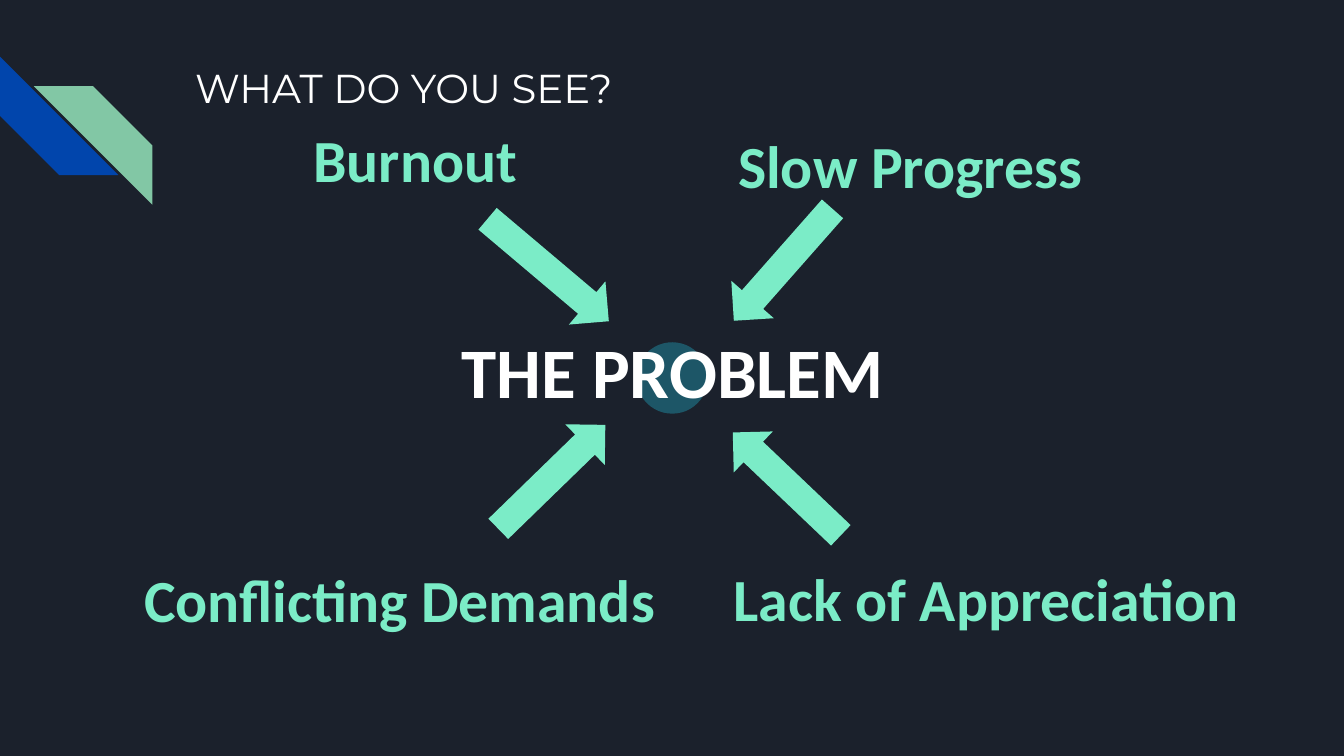
from dataclasses import dataclass

from pptx import Presentation
from pptx.dml.color import RGBColor
from pptx.enum.shapes import MSO_SHAPE as Shape
from pptx.enum.text import MSO_ANCHOR as Anchor, PP_ALIGN as Align
from pptx.util import Cm, Pt


@dataclass(frozen=True)
class Theme:
    background: str = "1B212C"
    blue: str = "0145AC"
    green: str = "82C7A5"
    teal: str = "1D5667"
    mint: str = "7BECC7"
    white: str = "FFFFFF"
    title_font: str = "Montserrat"
    body_font: str = "Calibri"
    title_size: float = 21.6
    label_size: int = 32
    center_size: int = 38


theme = Theme()


def set_text(sp, text, *, size, color, font=theme.body_font, bold=False, align=Align.CENTER):
    tf = sp.text_frame
    tf.word_wrap = True
    tf.vertical_anchor = Anchor.MIDDLE
    tf.margin_left = tf.margin_right = tf.margin_top = tf.margin_bottom = Cm(0.08)
    p = tf.paragraphs[0]
    p.alignment = align
    r = p.add_run()
    r.text = text
    r.font.name = font
    r.font.size = Pt(size)
    r.font.bold = bold
    r.font.color.rgb = RGBColor.from_string(color)


def add_filled(s, kind, left, top, width, height, color, rotation=0):
    sp = s.shapes.add_shape(kind, Cm(left), Cm(top), Cm(width), Cm(height))
    sp.shadow.inherit = False
    sp.rotation = rotation
    sp.fill.solid()
    sp.fill.fore_color.rgb = RGBColor.from_string(color)
    sp.line.fill.background()


prs = Presentation()
prs.slide_width, prs.slide_height = Cm(25.4), Cm(14.29)
s = prs.slides.add_slide(prs.slide_layouts[5])
s.background.fill.solid()
s.background.fill.fore_color.rgb = RGBColor.from_string(theme.background)

title = s.shapes.title
title.left, title.top, title.width, title.height = Cm(3.61), Cm(1.09), Cm(19.56), Cm(1.14)
set_text(title, "WHAT DO YOU SEE?", size=theme.title_size, color=theme.white,
         font=theme.title_font, align=Align.LEFT)

add_filled(s, Shape.DIAGONAL_STRIPE, 0, 1.07, 2.24, 2.24, theme.blue, 270)
add_filled(s, Shape.DIAGONAL_STRIPE, 0.64, 1.63, 2.24, 2.24, theme.green, 90)
add_filled(s, Shape.OVAL, 12.03, 6.47, 1.35, 1.35, theme.teal)

arrows = [
    (8.86, 4.57, 3, 40.2),
    (13.39, 4.47, 2.82, 131.4),
    (9.02, 8.48, 2.82, 315.8),
    (13.46, 8.61, 2.82, 223.6),
]
for left, top, length, angle in arrows:
    add_filled(s, Shape.RIGHT_ARROW, left, top, length, 1.07, theme.mint, angle)

labels = [
    ("Burnout", 4.42, 2.24, 6.86, 1.5, theme.label_size, theme.mint),
    ("Slow Progress", 12.29, 2.36, 9.83, 1.5, theme.label_size, theme.mint),
    ("Conflicting Demands", 2.11, 10.64, 10.9, 1.35, theme.label_size, theme.mint),
    ("Lack of Appreciation", 13.26, 10.54, 10.77, 1.5, theme.label_size, theme.mint),
    ("THE PROBLEM", 7.8, 6.1, 9.83, 1.78, theme.center_size, theme.white),
]
for text, left, top, width, height, size, color in labels:
    box = s.shapes.add_textbox(Cm(left), Cm(top), Cm(width), Cm(height))
    set_text(box, text, size=size, color=color, bold=True)

prs.save("out.pptx")
